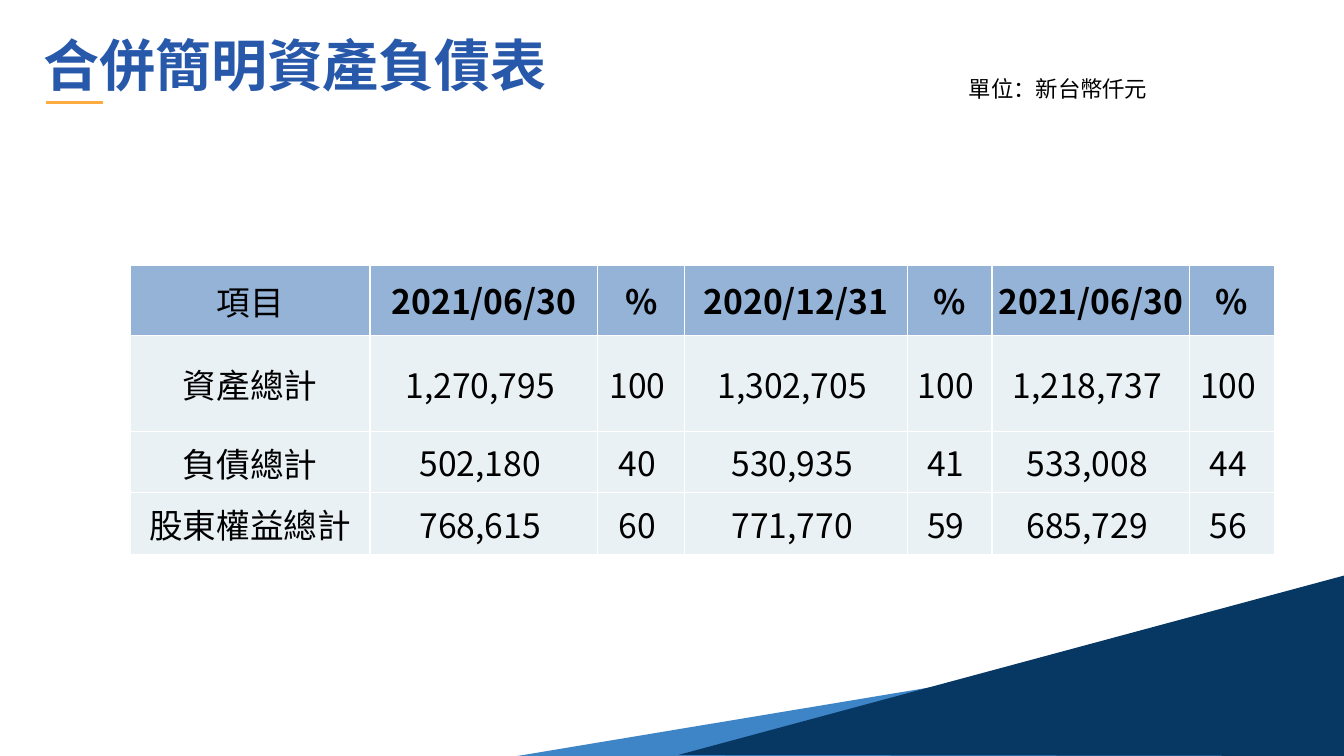
from lxml import etree
from pptx import Presentation
from pptx.dml.color import RGBColor
from pptx.enum.shapes import MSO_CONNECTOR
from pptx.enum.text import MSO_ANCHOR, MSO_AUTO_SIZE, PP_ALIGN
from pptx.oxml.ns import qn
from pptx.util import Inches, Pt

LINE = MSO_CONNECTOR.STRAIGHT
MIDDLE = MSO_ANCHOR.MIDDLE
CENTER = PP_ALIGN.CENTER
GROW = MSO_AUTO_SIZE.SHAPE_TO_FIT_TEXT

# Content
TITLE = "合併簡明資產負債表"
UNIT = "單位：新台幣仟元"
HEAD = ["項目", "2021/06/30", "%", "2020/12/31", "%", "2021/06/30", "%"]
BODY = [
    ("資產總計", 1270795, 100, 1302705, 100, 1218737, 100),
    ("負債總計", 502180, 40, 530935, 41, 533008, 44),
    ("股東權益總計", 768615, 60, 771770, 59, 685729, 56),
]
COLS = [2.38, 2.26, 0.86, 2.21, 0.84, 1.96, 0.84]
ROWS = [0.7, 0.95, 0.61, 0.61]
WEDGES = [
    ("sky", [(13.55, 6.1), (4.77, 7.56), (13.56, 7.65)]),
    ("navy", [(6.73, 7.49), (13.48, 5.67), (13.5, 7.5)]),
]
FONT = "Noto Sans CJK SC"
HEX = {
    "sky": "3D85C6", "navy": "073763", "title": "2858AA", "accent": "FFAB40",
    "head": "95B3D7", "body": "E9F1F5", "text": "000000", "rule": "FFFFFF",
}


def color(name):
    return RGBColor.from_string(HEX[name])


def write(frame, text, size, tone="text", bold=False):
    frame.text = text
    run = frame.paragraphs[0].runs[0]
    font = run.font
    font.name, font.size, font.bold = FONT, Pt(size), bold
    font.color.rgb = color(tone)
    east = etree.SubElement(run._r.get_or_add_rPr(), qn("a:ea"))
    east.set("typeface", FONT)


def border(cell):
    props = cell._tc.get_or_add_tcPr()
    for spot, side in enumerate(("lnL", "lnR", "lnT", "lnB")):
        edge = etree.Element(qn("a:" + side), w=str(Pt(1)))
        fill = etree.SubElement(edge, qn("a:solidFill"))
        etree.SubElement(fill, qn("a:srgbClr"), val=HEX["rule"])
        props.insert(spot, edge)


prs = Presentation()
prs.slide_width, prs.slide_height = Inches(13.33), Inches(7.5)
slide = prs.slides.add_slide(prs.slide_layouts[6])
shapes = slide.shapes

# Corner wedges
for tone, points in WEDGES:
    points = [(Inches(x), Inches(y)) for x, y in points]
    build = shapes.build_freeform(*points[0])
    build.add_line_segments(points[1:], close=True)
    wedge = build.convert_to_shape()
    wedge.shadow.inherit = False
    wedge.fill.solid()
    wedge.fill.fore_color.rgb = color(tone)
    wedge.line.fill.background()

# Title and its accent line
title = shapes.add_textbox(Inches(0.33), Inches(0.1), Inches(11.89), Inches(1.08))
title.text_frame.word_wrap = True
title.text_frame.vertical_anchor = MIDDLE
write(title.text_frame, TITLE, 40, "title", True)

accent = shapes.add_connector(LINE, Inches(0.46), Inches(1.02), Inches(1.02), Inches(1.02))
accent.line.color.rgb = color("accent")
accent.line.width = Pt(2.25)
etree.SubElement(accent._element.spPr, qn("a:effectLst"))

# Balance sheet
table = shapes.add_table(
    len(ROWS), len(COLS), Inches(1.29), Inches(2.63),
    Inches(sum(COLS)), Inches(sum(ROWS))).table
for col, width in zip(table.columns, COLS):
    col.width = Inches(width)
for row, height in zip(table.rows, ROWS):
    row.height = Inches(height)

# Each figure keeps a trailing space
lines = [HEAD] + [[name] + [f"{num:,} " for num in nums] for name, *nums in BODY]
for r, line in enumerate(lines):
    for c, text in enumerate(line):
        cell = table.cell(r, c)
        cell.fill.solid()
        cell.fill.fore_color.rgb = color("body" if r else "head")
        border(cell)
        pad = Inches(0 if c else 0.01)
        cell.margin_left = cell.margin_right = cell.margin_top = pad
        cell.margin_bottom = 0
        cell.vertical_anchor = MIDDLE
        write(cell.text_frame, text, 24, bold=r == 0 and c > 0)
        cell.text_frame.paragraphs[0].alignment = CENTER

# Unit note
unit = shapes.add_textbox(Inches(9.51), Inches(0.7), Inches(2), Inches(0.37))
unit.text_frame.word_wrap = False
unit.text_frame.auto_size = GROW
write(unit.text_frame, UNIT, 16)

prs.save("out.pptx")
